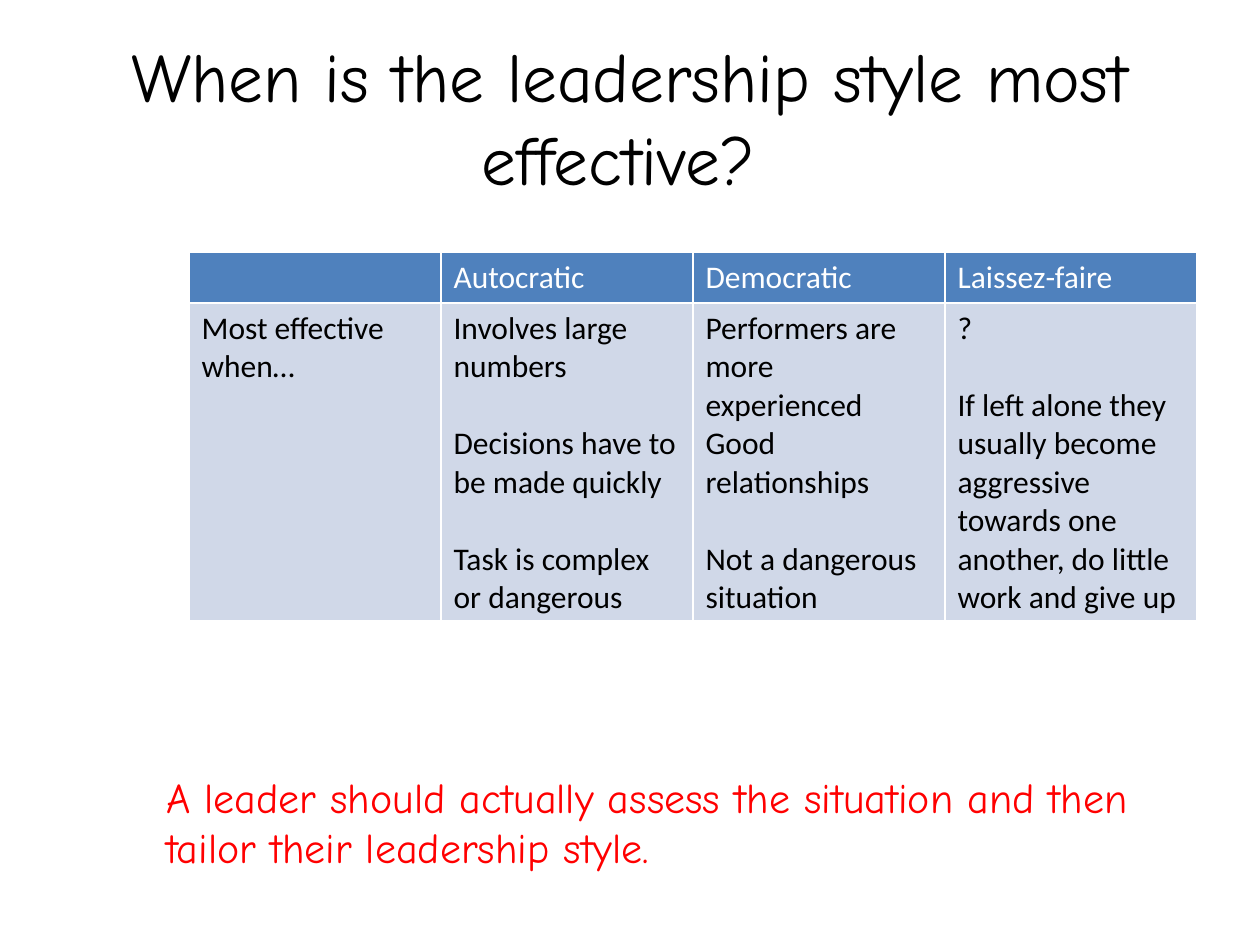
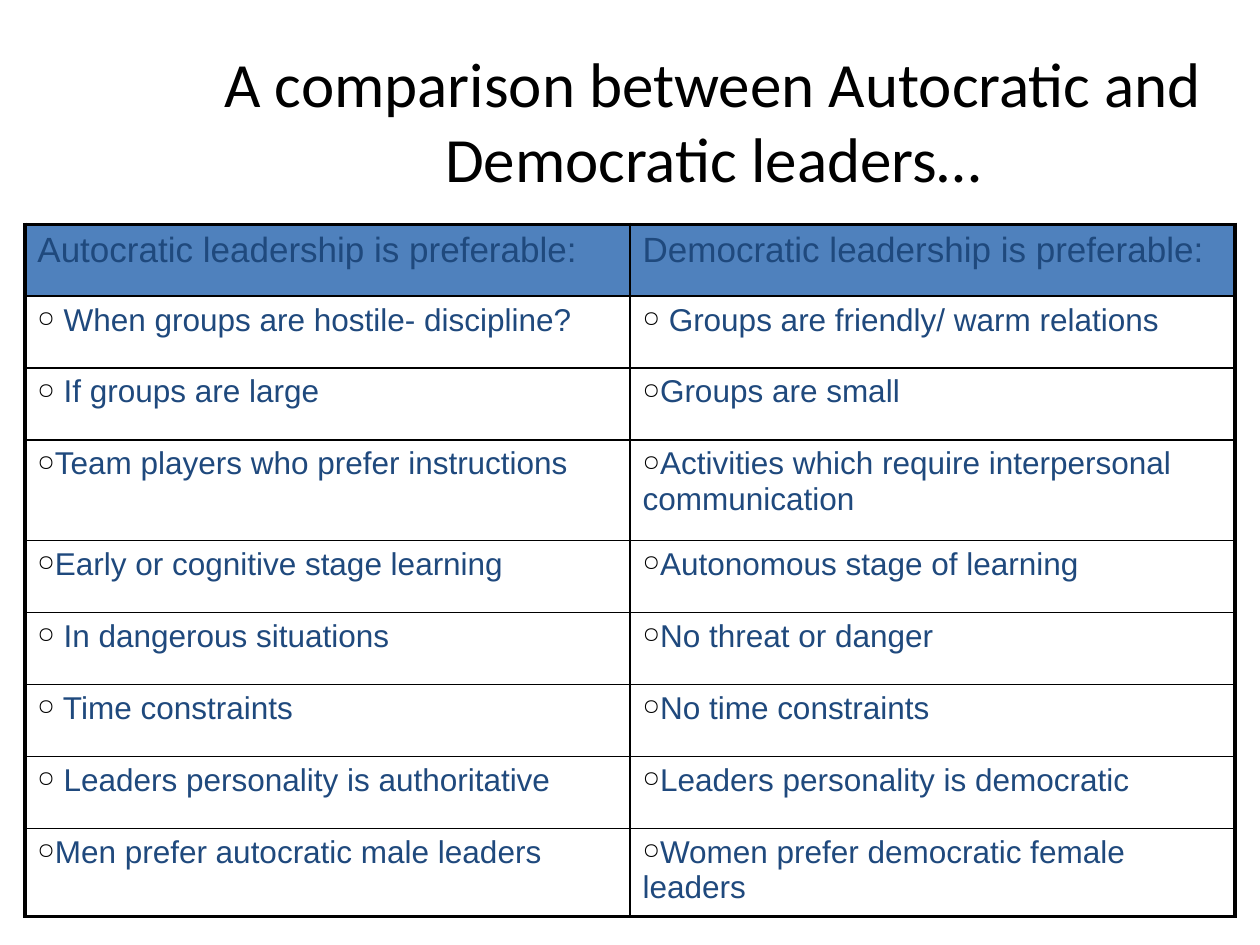
from dataclasses import dataclass

from lxml.etree import SubElement
from pptx import Presentation
from pptx.dml.color import RGBColor
from pptx.enum.text import MSO_ANCHOR as Anchor, PP_ALIGN as Align
from pptx.oxml.ns import qn
from pptx.util import Cm, Pt


@dataclass(frozen=True)
class Theme:
    black: str = "000000"
    white: str = "FFFFFF"
    red: str = "FF0000"
    navy: str = "1F497D"
    blue: str = "4F81BD"
    pale_blue: str = "D0D8E8"
    hand: str = "Comic Neue"
    plain: str = "Calibri"
    sans: str = "Arial"
    title_large: float = 39.6
    title: float = 36
    note: float = 24
    heading: float = 20
    body: float = 18
    block_gap: float = 22
    thin: float = 1
    thick: float = 2.25


THEME = Theme()


def font_format(name, size, color):
    return {"name": name, "size": Pt(size), "color": color}


def add_color(parent, color):
    SubElement(parent, qn("a:srgbClr"), val=color)


class Deck:
    def __init__(self, theme):
        self.theme = theme
        self.presentation = Presentation()
        self.presentation.slide_width = Cm(25.4)
        self.presentation.slide_height = Cm(19.05)
        self.slide = None

    def add_slide(self):
        blank = self.presentation.slide_layouts[6]
        self.slide = self.presentation.slides.add_slide(blank)

    def add_run(self, paragraph, text, font):
        run = paragraph.add_run()
        run.text = text
        for key, value in font.items():
            if key == "color":
                run.font.color.rgb = RGBColor.from_string(value)
            else:
                setattr(run.font, key, value)

    def text(self, text, box, font, anchor, align=Align.LEFT):
        frame = self.slide.shapes.add_textbox(*map(Cm, box)).text_frame
        for key, value in {"word_wrap": True, "vertical_anchor": anchor}.items():
            setattr(frame, key, value)
        frame.paragraphs[0].alignment = align
        self.add_run(frame.paragraphs[0], text, font)

    def title(self, text, box, font):
        self.text(text, box, font, Anchor.MIDDLE, Align.CENTER)

    def bullet(self, paragraph):
        properties = paragraph._p.get_or_add_pPr()
        for key in ("marL", "indent"):
            properties.set(key, "0")
        add_color(SubElement(properties, qn("a:buClr")), self.theme.black)
        SubElement(properties, qn("a:buSzPct"), val="70000")
        SubElement(properties, qn("a:buChar"), char="○")

    def borders(self, cell, color, widths):
        """Draw the left, right, top and bottom lines of a cell, widths in points."""
        properties = cell._tc.get_or_add_tcPr()
        for side, width in zip("LRTB", widths):
            line = SubElement(properties, qn(f"a:ln{side}"), w=str(Pt(width)))
            add_color(SubElement(line, qn("a:solidFill")), color)

    def fill_cell(self, cell, blocks, font, bulleted):
        """Set blocks apart by a gap; a line break in one starts a paragraph."""
        frame = cell.text_frame
        for block_index, block in enumerate(blocks):
            for line_index, line in enumerate(block.split("\n")):
                first = block_index == line_index == 0
                paragraph = frame.paragraphs[0] if first else frame.add_paragraph()
                if block_index and not line_index:
                    paragraph.space_before = Pt(self.theme.block_gap)
                if bulleted:
                    self.bullet(paragraph)
                self.add_run(paragraph, line, font)

    def table(self, rows, corner, column_width, heights, head_font, body_font,
              line_color, outer, body_fill=None, bulleted=False):
        row_count, column_count = len(rows), len(rows[0])
        size = (column_width * column_count, sum(heights))
        table = self.slide.shapes.add_table(
            row_count, column_count, *map(Cm, corner + size)).table
        for key in ("first_row", "horz_banding"):
            setattr(table, key, False)
        for column in table.columns:
            column.width = Cm(column_width)
        for r, (row, height) in enumerate(zip(rows, heights)):
            table.rows[r].height = Cm(height)
            for c, blocks in enumerate(row):
                cell = table.cell(r, c)
                at_edge = (c == 0, c == column_count - 1, r == 0, r == row_count - 1)
                self.borders(cell, line_color,
                             [outer if edge else self.theme.thin for edge in at_edge])
                fill = body_fill if r else self.theme.blue
                if fill:
                    cell.fill.solid()
                    cell.fill.fore_color.rgb = RGBColor.from_string(fill)
                else:
                    cell.fill.background()
                self.fill_cell(cell, blocks, body_font if r else head_font,
                               bulleted and r > 0)


EFFECTIVE_WHEN = [
    [[], ["Autocratic"], ["Democratic"], ["Laissez-faire"]],
    [
        ["Most effective when…"],
        ["Involves large numbers", "Decisions have to be made quickly",
         "Task is complex or dangerous"],
        ["Performers are more experienced\nGood relationships",
         "Not a dangerous situation"],
        ["?", "If left alone they usually become aggressive towards one another, "
              "do little work and give up"],
    ],
]

PREFERABLE = [
    ("Autocratic leadership is preferable:", "Democratic leadership is preferable:"),
    (" When groups are hostile- discipline?", " Groups are friendly/ warm relations"),
    (" If groups are large", "Groups are small"),
    ("Team players who prefer instructions",
     "Activities which require interpersonal communication"),
    ("Early or cognitive stage learning", "Autonomous stage of learning"),
    (" In dangerous situations", "No threat or danger"),
    (" Time constraints", "No time constraints"),
    (" Leaders personality is authoritative", "Leaders personality is democratic"),
    ("Men prefer autocratic male leaders", "Women prefer democratic female leaders"),
]


def add_effectiveness_slide(deck):
    theme = deck.theme
    deck.add_slide()
    deck.title("When is the leadership style most effective? ",
               (1.27, 0.76, 22.86, 3.18),
               font_format(theme.hand, theme.title_large, theme.black))
    deck.table(EFFECTIVE_WHEN, (3.81, 5.08), 5.08, [1.03, 6.4],
               font_format(theme.plain, theme.body, theme.white),
               font_format(theme.plain, theme.body, theme.black),
               theme.white, theme.thin, body_fill=theme.pale_blue)
    deck.text("A leader should actually assess the situation and then tailor "
              "their leadership style.", (3.1, 14.53, 20.32, 3.18),
              font_format(theme.hand, theme.note, theme.red), Anchor.BOTTOM)


def add_comparison_slide(deck):
    theme = deck.theme
    deck.add_slide()
    deck.title("A comparison between Autocratic and Democratic leaders…",
               (4.24, 0.53, 20.27, 3.78),
               font_format(theme.plain, theme.title, theme.black))
    rows = [[[text] for text in pair] for pair in PREFERABLE]
    heights = [1.45] * 3 + [2.03] + [1.45] * 4 + [1.78]
    deck.table(rows, (0.5, 4.52), 12.2, heights,
               font_format(theme.sans, theme.heading, theme.navy),
               font_format(theme.sans, theme.body, theme.navy),
               theme.black, theme.thick, bulleted=True)


def main():
    deck = Deck(THEME)
    add_effectiveness_slide(deck)
    add_comparison_slide(deck)
    deck.presentation.save("out.pptx")


if __name__ == "__main__":
    main()
